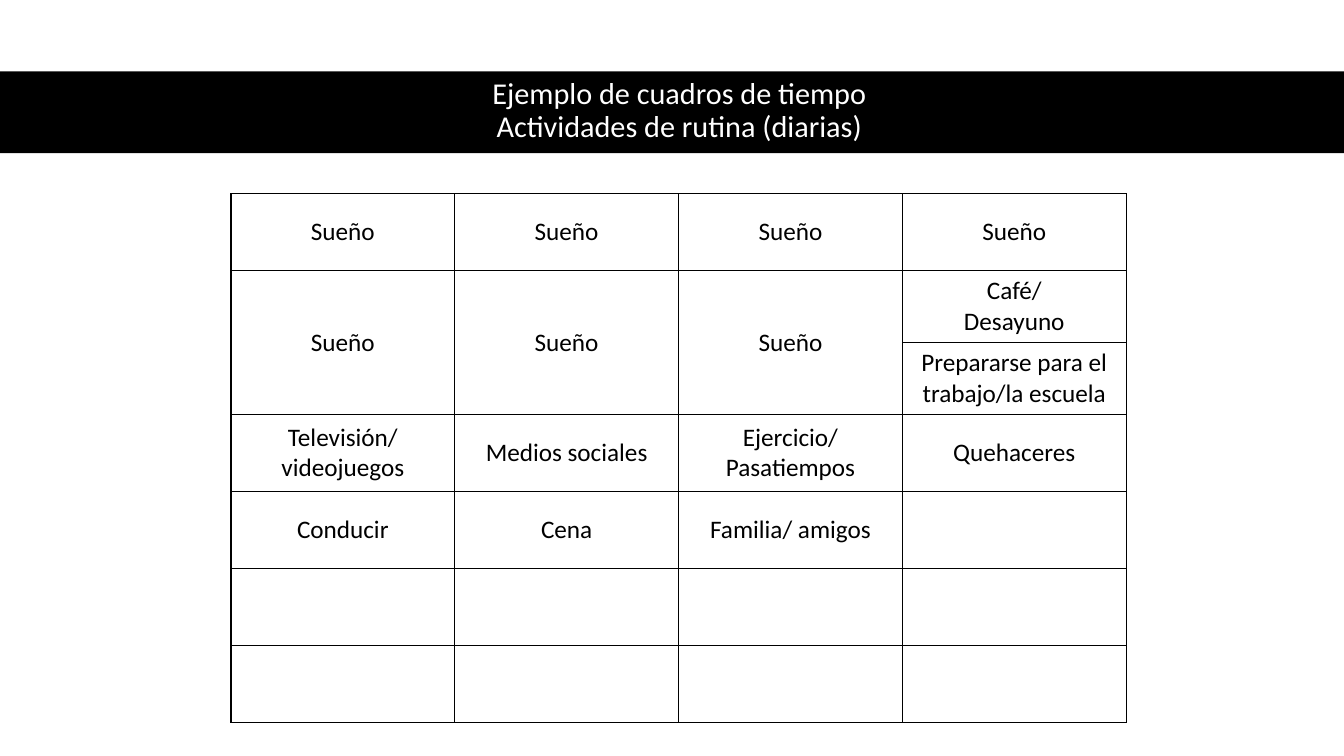
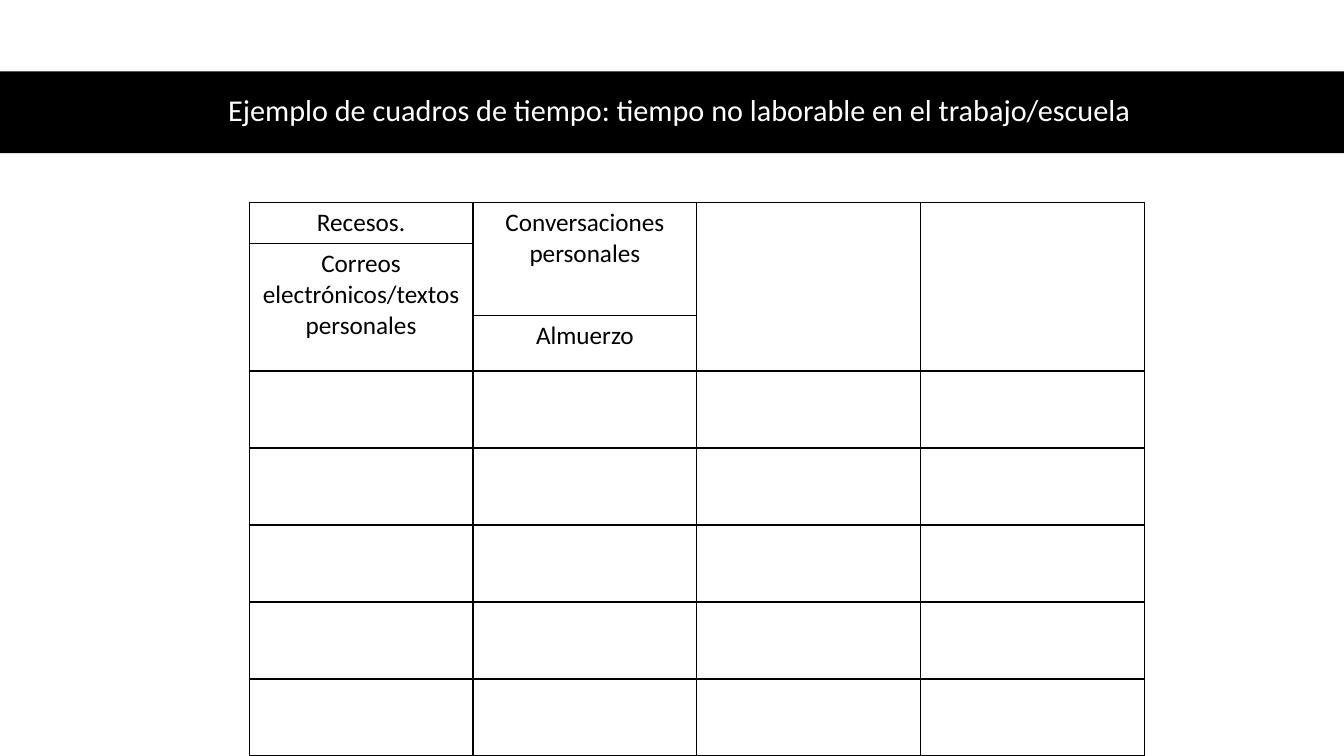
from lxml.etree import SubElement
from pptx import Presentation
from pptx.dml.color import RGBColor
from pptx.enum.shapes import MSO_SHAPE as Shape
from pptx.enum.text import MSO_ANCHOR as Anchor, MSO_AUTO_SIZE as AutoSize, PP_ALIGN as Align
from pptx.oxml.ns import qn
from pptx.util import Cm, Pt

COLORS = {"band": "000000", "title": "FFFFFF", "text": "000000", "border": "000000"}
TITLE_ONLY = 5
TALL_ROW = 1.94
TWO_LINE_ROW = 1.81


class Deck:
    """Holds the shared style and the slide being built."""

    font = "Calibri"
    width, height = 33.87, 19.05
    band_top, band_height = 1.8, 2.06
    column_width = 5.64

    def __init__(self):
        self.presentation = Presentation()
        self.presentation.slide_width = Cm(self.width)
        self.presentation.slide_height = Cm(self.height)
        self.slide = None

    def add_slide(self, title):
        layout = self.presentation.slide_layouts[TITLE_ONLY]
        self.slide = self.presentation.slides.add_slide(layout)
        self.add_title(title)
        self.add_band()

    def format_text(self, text_frame, size, color):
        for paragraph in text_frame.paragraphs:
            paragraph.alignment = Align.CENTER
            for run in paragraph.runs:
                run.font.name = self.font
                run.font.size = Pt(size)
                run.font.color.rgb = RGBColor.from_string(COLORS[color])

    def add_title(self, text):
        title = self.slide.shapes.title
        title.left, title.top = Cm(1.55), Cm(1.78)
        title.width, title.height = Cm(31.14), Cm(self.band_height)
        text_frame = title.text_frame
        text_frame.text = text
        text_frame.auto_size = AutoSize.NONE
        text_frame.word_wrap = True
        text_frame.vertical_anchor = Anchor.MIDDLE
        text_frame.paragraphs[0].line_spacing = 0.9
        self.format_text(text_frame, 21.6, "title")

    def add_band(self):
        band = self.slide.shapes.add_shape(
            Shape.RECTANGLE, 0, Cm(self.band_top), Cm(self.width), Cm(self.band_height))
        band.shadow.inherit = False
        band.fill.solid()
        band.fill.fore_color.rgb = RGBColor.from_string(COLORS["band"])
        band.line.fill.background()
        # The band lies behind the title
        self.slide.shapes.title.element.addprevious(band.element)

    def add_borders(self, cell):
        properties = cell._tc.get_or_add_tcPr()
        for index, side in enumerate(("a:lnL", "a:lnR", "a:lnT", "a:lnB")):
            line = SubElement(properties, qn(side), w=str(Pt(1)))
            fill = SubElement(line, qn("a:solidFill"))
            SubElement(fill, qn("a:srgbClr"), val=COLORS["border"])
            properties.insert(index, line)

    def add_table(self, left, top, row_heights, texts, merges, anchor):
        """texts maps (row, column) to wording; merges lists first and last cells."""
        columns = 4
        table = self.slide.shapes.add_table(
            len(row_heights), columns, Cm(left), Cm(top),
            Cm(columns * self.column_width), Cm(sum(row_heights))).table
        table.first_row = table.horz_banding = False
        for column in table.columns:
            column.width = Cm(self.column_width)
        for row, height in zip(table.rows, row_heights):
            row.height = Cm(height)
            for cell in row.cells:
                cell.fill.background()
                cell.vertical_anchor = anchor
                self.add_borders(cell)
        for first, last in merges:
            table.cell(*first).merge(table.cell(*last))
        for position, text in texts.items():
            text_frame = table.cell(*position).text_frame
            text_frame.text = text
            self.format_text(text_frame, 18, "text")


def main():
    deck = Deck()

    # Daily routine
    deck.add_slide("Ejemplo de cuadros de tiempo\vActividades de rutina (diarias)")
    routine_rows = {
        0: ["Sueño"] * 4,
        1: ["Sueño"] * 3 + ["Café/\vDesayuno"],
        3: ["Televisión/videojuegos", "Medios sociales", "Ejercicio/Pasatiempos", "Quehaceres"],
        4: ["Conducir", "Cena", "Familia/ amigos"],
    }
    routine = {(row, column): text for row, texts in routine_rows.items()
               for column, text in enumerate(texts)}
    routine[2, 3] = "Prepararse para el trabajo/la escuela"
    deck.add_table(
        5.82, 4.88, [TALL_ROW] + [TWO_LINE_ROW] * 2 + [TALL_ROW] * 4, routine,
        [((1, column), (2, column)) for column in range(3)], Anchor.MIDDLE)

    # Free time at work or school
    deck.add_slide("Ejemplo de cuadros de tiempo: tiempo no laborable en el trabajo/escuela")
    free_time = {
        (0, 0): "Recesos.",
        (0, 1): "Conversaciones personales",
        (1, 0): "Correos electrónicos/textos personales",
        (2, 1): "Almuerzo",
    }
    deck.add_table(
        6.28, 5.11, [1.02, TWO_LINE_ROW, 1.4] + [TALL_ROW] * 5, free_time,
        [((1, 0), (2, 0)), ((0, 1), (1, 1)), ((0, 2), (2, 2)), ((0, 3), (2, 3))], Anchor.TOP)

    deck.presentation.save("out.pptx")


if __name__ == "__main__":
    main()
